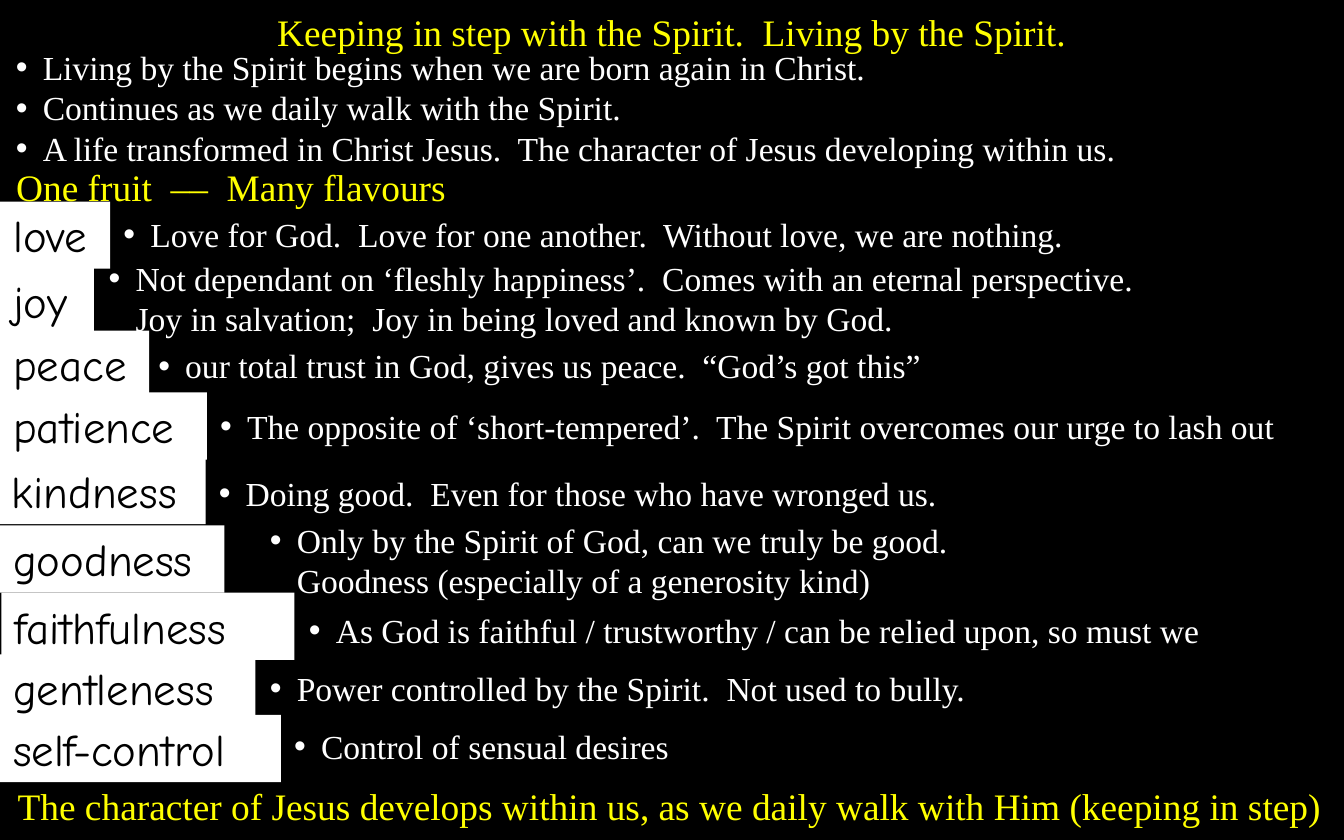
from dataclasses import dataclass

from lxml.etree import SubElement
from pptx import Presentation
from pptx.dml.color import RGBColor
from pptx.enum.shapes import MSO_SHAPE as Preset
from pptx.enum.text import MSO_ANCHOR as Anchor, MSO_AUTO_SIZE as AutoSize, PP_ALIGN as Align
from pptx.oxml.ns import qn
from pptx.util import Emu, Pt

PX = 9144


@dataclass(frozen=True)
class Theme:
    serif: str = "Times New Roman"
    hand: str = "Comic Neue"
    backdrop: RGBColor = RGBColor(0, 0, 0)
    heading: RGBColor = RGBColor(255, 255, 0)
    body: RGBColor = RGBColor(255, 255, 255)
    label_fill: RGBColor = RGBColor(255, 255, 255)
    label_text: RGBColor = RGBColor(0, 0, 0)
    heading_size: int = 20
    body_size: int = 18
    label_size: int = 24


@dataclass(frozen=True)
class Box:
    left: int
    top: int
    width: int
    height: int

    def emu(self) -> tuple:
        return tuple(Emu(n * PX) for n in (self.left, self.top, self.width, self.height))


@dataclass(frozen=True)
class Passage:
    box: Box
    lines: tuple


@dataclass(frozen=True)
class Flavour:
    name: str
    label: Box
    meaning: Passage


THEME = Theme()

HEADINGS = (
    Passage(Box(0, 2, 1000, 44), ("Keeping in step with the Spirit.  Living by the Spirit.",)),
    Passage(Box(-4, 117, 352, 44), ("One fruit  ––  Many flavours",)),
    Passage(Box(1, 578, 995, 44), (
        "The character of Jesus develops within us, as we daily walk with Him (keeping in step)",)),
)

INTRODUCTION = (
    Passage(Box(2, 30, 1000, 71), (
        "Living by the Spirit begins when we are born again in Christ.",
        "Continues as we daily walk with the Spirit.")),
    Passage(Box(2, 90, 1000, 40), (
        "A life transformed in Christ Jesus.  The character of Jesus developing within us.",)),
)

FLAVOURS = (
    Flavour("love", Box(0, 150, 82, 50), Passage(Box(82, 154, 919, 40), (
        "Love for God.  Love for one another.  Without love, we are nothing.",))),
    Flavour("joy", Box(0, 199, 70, 50), Passage(Box(71, 187, 919, 71), (
        "Not dependant on ‘fleshly happiness’.  Comes with an eternal perspective.\n"
        "Joy in salvation;  Joy in being loved and known by God.",))),
    Flavour("peace", Box(0, 246, 111, 50), Passage(Box(108, 252, 890, 40), (
        "our total trust in God, gives us peace.  “God’s got this”",))),
    Flavour("patience", Box(0, 292, 154, 50), Passage(Box(154, 297, 847, 40), (
        "The opposite of ‘short-tempered’.  The Spirit overcomes our urge to lash out",))),
    Flavour("kindness", Box(-1, 340, 154, 50), Passage(Box(153, 347, 847, 40), (
        "Doing good.  Even for those who have wronged us.",))),
    Flavour("goodness", Box(0, 391, 167, 50), Passage(Box(191, 382, 801, 71), (
        "Only by the Spirit of God, can we truly be good.\n"
        "Goodness (especially of a generosity kind)",))),
    Flavour("faithfulness", Box(1, 441, 218, 50), Passage(Box(220, 449, 781, 40), (
        "As God is faithful / trustworthy / can be relied upon, so must we",))),
    Flavour("gentleness", Box(0, 487, 190, 50), Passage(Box(191, 492, 781, 40), (
        "Power controlled by the Spirit.  Not used to bully.",))),
    Flavour("self-control", Box(0, 532, 209, 50), Passage(Box(209, 535, 781, 40), (
        "Control of sensual desires",))),
)


def write(frame, lines: tuple, font: str, size: int, color: RGBColor, align: Align) -> None:
    frame.word_wrap = True
    frame.auto_size = AutoSize.SHAPE_TO_FIT_TEXT
    frame.vertical_anchor = Anchor.TOP
    for index, line in enumerate(lines):
        paragraph = frame.add_paragraph() if index else frame.paragraphs[0]
        paragraph.text = line
        paragraph.alignment = align
        for run in paragraph.runs:
            run.font.name = font
            run.font.size = Pt(size)
            run.font.color.rgb = color


def hang(frame, indent: int, bullet: str = "") -> None:
    for paragraph in frame.paragraphs:
        properties = paragraph._p.get_or_add_pPr()
        properties.set("marL", str(indent * PX))
        properties.set("indent", str(-indent * PX))
        if bullet:
            SubElement(properties, qn("a:buFont")).set("typeface", "Arial")
            SubElement(properties, qn("a:buChar")).set("char", bullet)


def draw_heading(slide, heading: Passage) -> None:
    frame = slide.shapes.add_textbox(*heading.box.emu()).text_frame
    write(frame, heading.lines, THEME.serif, THEME.heading_size, THEME.heading, Align.CENTER)
    hang(frame, 35)


def draw_points(slide, points: Passage) -> None:
    frame = slide.shapes.add_textbox(*points.box.emu()).text_frame
    write(frame, points.lines, THEME.serif, THEME.body_size, THEME.body, Align.LEFT)
    hang(frame, 20, "•")


def draw_label(slide, flavour: Flavour) -> None:
    label = slide.shapes.add_shape(Preset.RECTANGLE, *flavour.label.emu())
    label.shadow.inherit = False
    label.fill.solid()
    label.fill.fore_color.rgb = THEME.label_fill
    label.line.fill.background()
    write(label.text_frame, (flavour.name,), THEME.hand, THEME.label_size,
          THEME.label_text, Align.LEFT)


def main() -> None:
    deck = Presentation()
    deck.slide_width, deck.slide_height = Emu(1000 * PX), Emu(625 * PX)
    slide = deck.slides.add_slide(deck.slide_layouts[6])
    slide.background.fill.solid()
    slide.background.fill.fore_color.rgb = THEME.backdrop
    for flavour in FLAVOURS:
        draw_label(slide, flavour)
    for heading in HEADINGS:
        draw_heading(slide, heading)
    for points in INTRODUCTION + tuple(flavour.meaning for flavour in FLAVOURS):
        draw_points(slide, points)
    deck.save("out.pptx")


if __name__ == "__main__":
    main()
